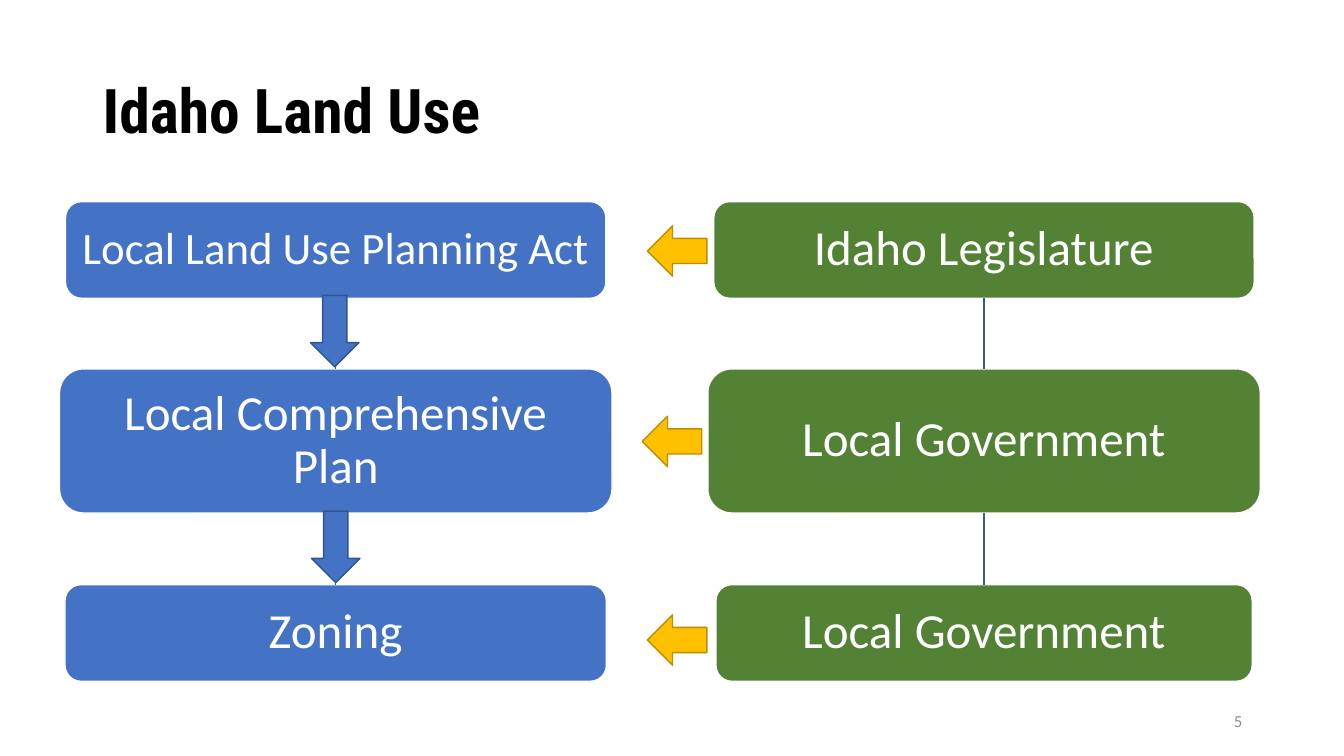
"""Builds the Idaho Land Use slide: planning steps and the bodies responsible for them."""
from lxml import etree
from pptx import Presentation
from pptx.dml.color import RGBColor
from pptx.enum.shapes import MSO_CONNECTOR, MSO_SHAPE
from pptx.enum.text import MSO_ANCHOR, PP_ALIGN
from pptx.oxml.ns import qn
from pptx.util import Pt

ROUNDED = MSO_SHAPE.ROUNDED_RECTANGLE
DOWN, LEFTWARD = MSO_SHAPE.DOWN_ARROW, MSO_SHAPE.LEFT_ARROW
STRAIGHT = MSO_CONNECTOR.STRAIGHT
LEFT, CENTER, RIGHT = PP_ALIGN.LEFT, PP_ALIGN.CENTER, PP_ALIGN.RIGHT
MIDDLE = MSO_ANCHOR.MIDDLE
BOTTOM_SITE, TOP_SITE = 2, 0

PX = 9144
SLIDE = (1333, 750)
COLORS = {
    "step": "4472C4", "body": "548235", "influence": "FFC000",
    "step_edge": "325491", "influence_edge": "BD8E00", "link": "365B9D",
    "white": "FFFFFF", "title": "000000", "number": "8C8C8C",
}

TITLE = ("Idaho Land Use", (92, 40, 1150, 145))
NUMBER = ("5", (942, 695, 300, 40))
ROWS = [(200, 96), (366, 143), (580, 96)]
COLUMNS = [
    {"center": 333, "color": "step", "boxes": [
        ("Local Land Use Planning Act", 536, 32, 9),
        ("Local Comprehensive Plan", 548, 35, 10),
        ("Zoning", 537, 35, 10)]},
    {"center": 976, "color": "body", "boxes": [
        ("Idaho Legislature", 536, 35, 10),
        ("Local Government", 548, 35, 10),
        ("Local Government", 532, 35, 10)]},
]
STEP_ARROWS = [(308, 293), (309, 507)]
STEP_ARROW_SIZE = (48, 71)
INFLUENCE_ARROWS = [(642, 224), (637, 413), (642, 610)]
INFLUENCE_ARROW_SIZE = (59, 50)


def px(*lengths):
    return [round(length * PX) for length in lengths]


def rgb(name):
    return RGBColor.from_string(COLORS[name])


def write(holder, text, size, color, align, font="Calibri", bold=False, spacing=1.0):
    frame = holder.text_frame
    frame.word_wrap = True
    frame.vertical_anchor = MIDDLE
    paragraph = frame.paragraphs[0]
    paragraph.alignment = align
    paragraph.line_spacing = spacing
    run = paragraph.add_run()
    run.text = text
    run.font.size = Pt(size)
    run.font.name = font
    run.font.bold = bold
    run.font.color.rgb = rgb(color)


def add_figure(slide, preset, area, fill, edge):
    figure = slide.shapes.add_shape(preset, *px(*area))
    figure.shadow.inherit = False
    figure.fill.solid()
    figure.fill.fore_color.rgb = rgb(fill)
    figure.line.color.rgb = rgb(edge)
    figure.line.width = Pt(1)
    return figure


def add_link(slide, upper, lower):
    link = slide.shapes.add_connector(STRAIGHT, 0, 0, 0, 0)
    link.begin_connect(upper, BOTTOM_SITE)
    link.end_connect(lower, TOP_SITE)
    link.line.color.rgb = rgb("link")
    link.line.width = Pt(1)
    etree.SubElement(link._element.spPr, qn("a:effectLst"))


def add_column(slide, column):
    boxes = []
    for (text, width, size, inset), (top, height) in zip(column["boxes"], ROWS):
        area = (column["center"] - width / 2, top, width, height)
        box = add_figure(slide, ROUNDED, area, column["color"], "white")
        frame = box.text_frame
        frame.margin_left = frame.margin_right = inset * PX
        frame.margin_top = frame.margin_bottom = inset * PX
        write(box, text, size, "white", CENTER, spacing=0.9)
        boxes.append(box)
    for upper, lower in zip(boxes, boxes[1:]):
        add_link(slide, upper, lower)


def main():
    deck = Presentation()
    deck.slide_width, deck.slide_height = px(*SLIDE)
    slide = deck.slides.add_slide(deck.slide_layouts[6])

    text, area = TITLE
    title = slide.shapes.add_textbox(*px(*area))
    write(title, text, 44, "title", LEFT, "Roboto Condensed", True, 0.9)

    for column in COLUMNS:
        add_column(slide, column)
    for corner in STEP_ARROWS:
        add_figure(slide, DOWN, corner + STEP_ARROW_SIZE, "step", "step_edge")
    for corner in INFLUENCE_ARROWS:
        add_figure(slide, LEFTWARD, corner + INFLUENCE_ARROW_SIZE,
                   "influence", "influence_edge")

    text, area = NUMBER
    number = slide.shapes.add_textbox(*px(*area))
    write(number, text, 12, "number", RIGHT)

    deck.save("out.pptx")


if __name__ == "__main__":
    main()
